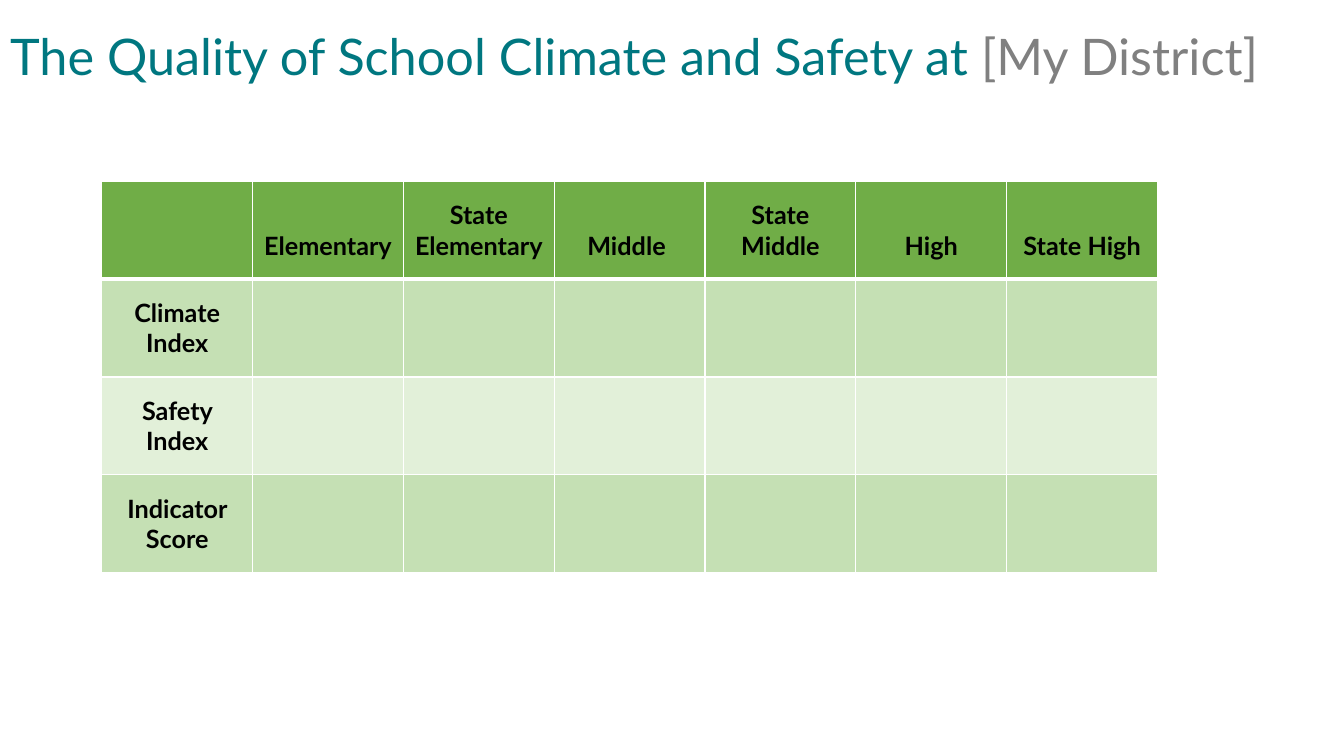
from lxml import etree
from pptx import Presentation
from pptx.dml.color import RGBColor
from pptx.enum import text as t
from pptx.oxml import ns
from pptx.util import Inches, Pt

# Content
TITLE = [("The Quality of School Climate and Safety at ", "007780"),
         ("[My District]", "808080")]
LEVELS = ["", "Elementary", "State Elementary", "Middle ", "State Middle",
          "High", "State High"]
TWO_LINE_LEVELS = {"State Elementary", "State Middle"}
MEASURES = ["Climate Index", "Safety Index", "Indicator Score"]

# Look
FONT = "Lato"
HEADER_FILL = "70AD47"
BAND_FILLS = ["C5E0B4", "E2F0D9"]
TABLE_LEFT, TABLE_TOP, TABLE_WIDTH, ROW_HEIGHT = 1.01, 1.8, 10.47, 0.97
LINE_HEIGHT = 0.3


def color(hex_code):
    return RGBColor.from_string(hex_code)


def add_text(paragraph, text, size=18, bold=False, hex_code="000000"):
    run = paragraph.add_run()
    run.text = text
    run.font.name, run.font.size, run.font.bold = FONT, Pt(size), bold
    run.font.color.rgb = color(hex_code)


def add_border(cell, side, points, hex_code="FFFFFF"):
    line = etree.SubElement(cell._tc.get_or_add_tcPr(), ns.qn(f"a:ln{side}"),
                            w=str(Pt(points)))
    fill = etree.SubElement(line, ns.qn("a:solidFill"))
    etree.SubElement(fill, ns.qn("a:srgbClr"), val=hex_code)


prs = Presentation()
prs.slide_width, prs.slide_height = Inches(13.33), Inches(7.5)
slide = prs.slides.add_slide(prs.slide_layouts[5])

# Title
title = slide.shapes.title
title.left, title.top = Inches(0), Inches(0)
title.width, title.height = Inches(13.33), Inches(1.17)
title.text_frame.vertical_anchor = t.MSO_ANCHOR.MIDDLE
heading = title.text_frame.paragraphs[0]
heading.alignment, heading.line_spacing = t.PP_ALIGN.LEFT, 0.9
for words, hex_code in TITLE:
    add_text(heading, words, size=36, hex_code=hex_code)

# Table: school levels across, measures down
rows = [LEVELS] + [[measure] + [""] * (len(LEVELS) - 1) for measure in MEASURES]
scores = slide.shapes.add_table(
    len(rows), len(LEVELS), Inches(TABLE_LEFT), Inches(TABLE_TOP),
    Inches(TABLE_WIDTH), Inches(ROW_HEIGHT * len(rows))).table
for column in scores.columns:
    column.width = Inches(TABLE_WIDTH / len(LEVELS))

for r, row in enumerate(rows):
    scores.rows[r].height = Inches(ROW_HEIGHT)
    for c, words in enumerate(row):
        cell = scores.cell(r, c)
        for side in "LRTB":
            # The rule between the header and the first measure is heavier
            heavy = (r, side) in {(0, "B"), (1, "T")}
            add_border(cell, side, 3 if heavy else 1)
        cell.fill.solid()
        cell.fill.fore_color.rgb = color(
            BAND_FILLS[(r - 1) % 2] if r else HEADER_FILL)
        cell.vertical_anchor = t.MSO_ANCHOR.MIDDLE
        label = cell.text_frame.paragraphs[0]
        label.alignment = t.PP_ALIGN.CENTER
        if words:
            add_text(label, words, bold=True)
            # One-line headers sit level with the second line of the others
            if r == 0 and words not in TWO_LINE_LEVELS:
                cell.margin_top = Inches(0.05 + LINE_HEIGHT)

prs.save("out.pptx")
